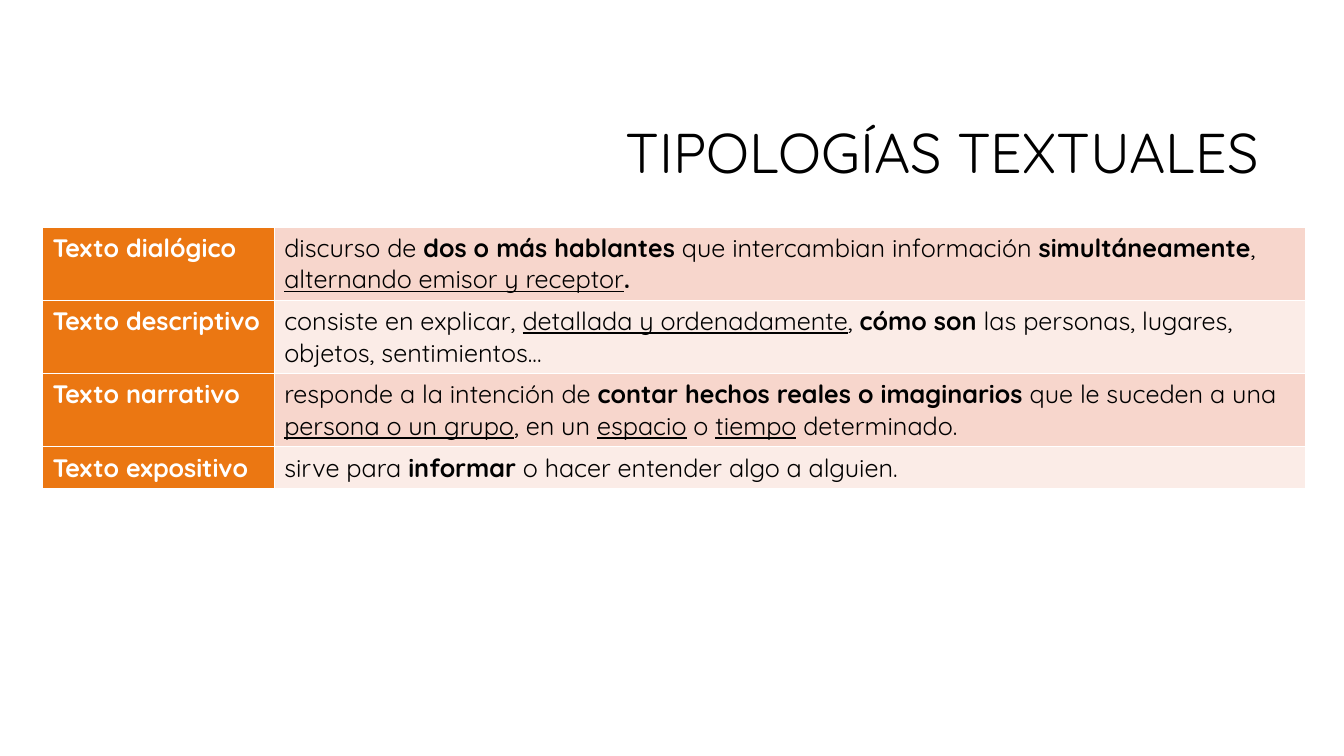
from dataclasses import dataclass

from lxml.etree import SubElement
from pptx import Presentation
from pptx.dml.color import RGBColor
from pptx.enum.text import MSO_ANCHOR, PP_ALIGN
from pptx.oxml.ns import qn
from pptx.slide import Slide
from pptx.table import _Cell
from pptx.text.text import Font, _Paragraph
from pptx.util import Cm, Pt

FONT = "Quicksand"
BLACK, WHITE, ORANGE = "000000", "FFFFFF", "EB7712"
BANDS = ("F7D6CC", "FBECE7")
COLUMN_WIDTHS = (Cm(5.84), Cm(25.98))
ROW_HEIGHT = Cm(1.04)


@dataclass(frozen=True)
class Span:
    text: str
    bold: bool = False
    underline: bool = False


@dataclass(frozen=True)
class TextType:
    name: str
    definition: tuple[Span, ...]


TEXT_TYPES = (
    TextType("Texto dialógico", (
        Span("discurso de "),
        Span("dos o más hablantes", bold=True),
        Span(" que intercambian información "),
        Span("simultáneamente", bold=True),
        Span(", "),
        Span("alternando emisor y receptor", underline=True),
        Span(".", bold=True),
    )),
    TextType("Texto descriptivo", (
        Span("consiste en explicar, "),
        Span("detallada y ordenadamente", underline=True),
        Span(", "),
        Span("cómo son ", bold=True),
        Span("las personas, lugares, objetos, sentimientos..."),
    )),
    TextType("Texto narrativo", (
        Span("responde a la intención de "),
        Span("contar hechos reales o imaginarios ", bold=True),
        Span("que le suceden a una "),
        Span("persona o un grupo", underline=True),
        Span(", en un "),
        Span("espacio", underline=True),
        Span(" o "),
        Span("tiempo", underline=True),
        Span(" determinado."),
    )),
    TextType("Texto expositivo", (
        Span("sirve para "),
        Span("informar", bold=True),
        Span(" o hacer entender algo a alguien."),
    )),
)


def color(value: str) -> RGBColor:
    return RGBColor.from_string(value)


def format_font(font: Font, size: float, ink: str, bold: bool = False, underline: bool = False) -> None:
    values = {"name": FONT, "size": Pt(size), "bold": bold, "underline": underline}
    for name, value in values.items():
        setattr(font, name, value)
    font.color.rgb = color(ink)


def write_spans(para: _Paragraph, spans: tuple[Span, ...], size: float, ink: str) -> None:
    for span in spans:
        run = para.add_run()
        run.text = span.text
        format_font(run.font, size, ink, span.bold, span.underline)


def add_borders(cell: _Cell, ink: str) -> None:
    properties = cell._tc.get_or_add_tcPr()
    for side in ("a:lnL", "a:lnR", "a:lnT", "a:lnB"):
        line = SubElement(properties, qn(side), w=str(Pt(1)))
        fill = SubElement(line, qn("a:solidFill"))
        SubElement(fill, qn("a:srgbClr"), val=ink)


def fill_cell(cell: _Cell, spans: tuple[Span, ...], ink: str, background: str) -> None:
    add_borders(cell, WHITE)
    cell.fill.solid()
    cell.fill.fore_color.rgb = color(background)
    write_spans(cell.text_frame.paragraphs[0], spans, 18, ink)


def add_title(page: Slide, text: str) -> None:
    title = page.shapes.title
    place = {"left": Cm(8.05), "top": Cm(2.13), "width": Cm(23.93), "height": Cm(3.58)}
    for name, value in place.items():
        setattr(title, name, value)
    title.text_frame.vertical_anchor = MSO_ANCHOR.MIDDLE
    para = title.text_frame.paragraphs[0]
    para.alignment = PP_ALIGN.RIGHT
    para.line_spacing = 0.9
    write_spans(para, (Span(text),), 40, BLACK)


def add_types_table(page: Slide) -> None:
    count = len(TEXT_TYPES)
    frame = page.shapes.add_table(
        count, len(COLUMN_WIDTHS), Cm(1.07), Cm(5.72), sum(COLUMN_WIDTHS), ROW_HEIGHT * count
    )
    table = frame.table
    table.first_row = table.horz_banding = False
    table.first_col = True
    for column, width in zip(table.columns, COLUMN_WIDTHS):
        column.width = width
    for index, text_type in enumerate(TEXT_TYPES):
        table.rows[index].height = ROW_HEIGHT
        fill_cell(table.cell(index, 0), (Span(text_type.name, bold=True),), WHITE, ORANGE)
        fill_cell(table.cell(index, 1), text_type.definition, BLACK, BANDS[index % 2])


def main() -> None:
    deck = Presentation()
    deck.slide_width, deck.slide_height = Cm(33.87), Cm(19.05)
    page = deck.slides.add_slide(deck.slide_layouts.get_by_name("Title Only"))

    # Heading
    add_title(page, "TIPOLOGÍAS TEXTUALES")

    # Text types and their definitions
    add_types_table(page)

    deck.save("out.pptx")


if __name__ == "__main__":
    main()
